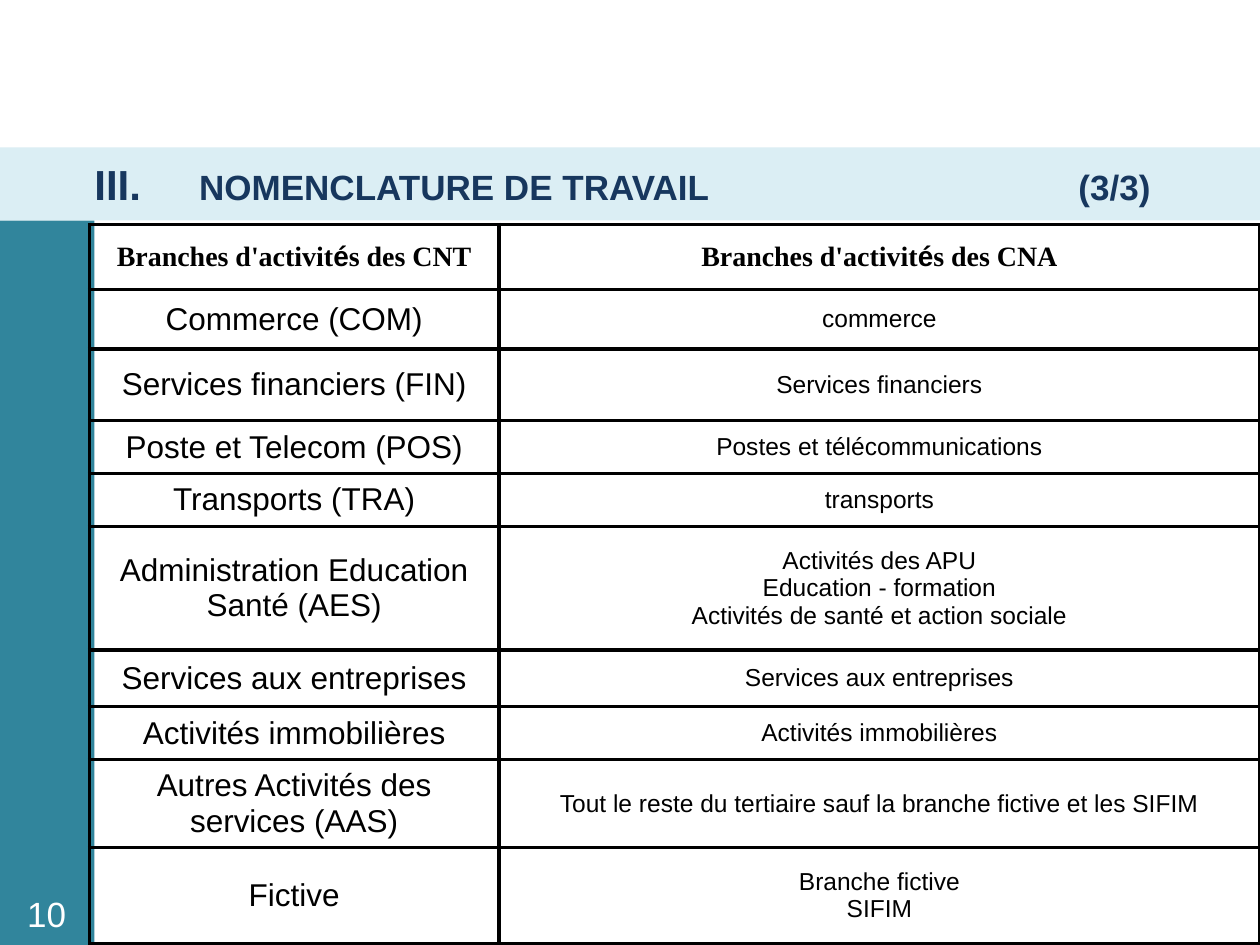
from lxml.etree import SubElement
from pptx import Presentation
from pptx.dml.color import RGBColor
from pptx.enum.shapes import MSO_SHAPE as Shape
from pptx.enum.text import MSO_ANCHOR as Anchor, PP_ALIGN as Align
from pptx.oxml.ns import qn
from pptx.util import Inches, Pt

BRANCHES = [
    (0.47, "Commerce (COM)", ["commerce"]),
    (0.57, "Services financiers (FIN)", ["Services financiers"]),
    (0.42, "Poste et Telecom (POS)", ["Postes et télécommunications"]),
    (0.42, "Transports (TRA)", ["transports"]),
    (0.98, "Administration Education Santé (AES)",
     ["Activités des APU", "Education - formation", "Activités de santé et action sociale"]),
    (0.45, "Services aux entreprises", ["Services aux entreprises"]),
    (0.42, "Activités immobilières", ["Activités immobilières"]),
    (0.66, "Autres Activités des services (AAS)",
     ["Tout le reste du tertiaire sauf la branche fictive et les SIFIM"]),
    (0.76, "Fictive", ["Branche fictive", "SIFIM"]),
]
HEADER_HEIGHT = 0.52
COLUMN_WIDTHS = (3.25, 6.04)


def rgb(value):
    return RGBColor.from_string(value)


def style(font, size, color, name="Arial", bold=False):
    font.size, font.name, font.bold = Pt(size), name, bold
    font.color.rgb = rgb(color)


def add_band(slide, box, color):
    band = slide.shapes.add_shape(Shape.RECTANGLE, *map(Inches, box))
    band.shadow.inherit = False
    band.fill.solid()
    band.fill.fore_color.rgb = rgb(color)
    band.line.fill.background()
    return band


def add_heading(slide, box):
    frame = add_band(slide, box, "DBEEF4").text_frame
    frame.margin_left = Inches(0.75)
    frame.margin_right = 0
    frame.vertical_anchor = Anchor.MIDDLE
    line = frame.paragraphs[0]
    line.alignment = Align.LEFT
    stops = SubElement(line._p.get_or_add_pPr(), qn("a:tabLst"))
    for position in (0.83, 7.81):
        SubElement(stops, qn("a:tab"), pos=str(Inches(position)), algn="l")
    for text, size in (("III.\t", 24), ("NOMENCLATURE DE TRAVAIL\t(3/3)", 20)):
        run = line.add_run()
        run.text = text
        style(run.font, size, "17375E", bold=True)


def add_page_number(slide, box):
    frame = slide.shapes.add_textbox(*map(Inches, box)).text_frame
    frame.word_wrap = True
    frame.vertical_anchor = Anchor.MIDDLE
    number = frame.paragraphs[0]
    number.text = "10"
    number.alignment = Align.CENTER
    style(number.font, 20, "FFFFFF")


def format_cell(cell):
    cell.vertical_anchor = Anchor.MIDDLE
    properties = cell._tc.get_or_add_tcPr()
    for side in ("lnL", "lnR", "lnT", "lnB"):
        border = SubElement(properties, qn(f"a:{side}"), w=str(Pt(2.25)))
        SubElement(SubElement(border, qn("a:solidFill")), qn("a:srgbClr"), val="000000")
    cell.fill.background()


def fill_header(cell, account):
    format_cell(cell)
    label = cell.text_frame.paragraphs[0]
    label.alignment = Align.CENTER
    for text, name in (("Branches d'activit", "Times New Roman"), ("é", "Arial"),
                       (f"s des {account}", "Times New Roman")):
        run = label.add_run()
        run.text = text
        style(run.font, 16, "000000", name, True)


def fill_cell(cell, lines, size):
    format_cell(cell)
    cell.text_frame.text = "\n".join(lines)
    for line in cell.text_frame.paragraphs:
        line.alignment = Align.CENTER
        style(line.font, size, "000000")


def add_branch_table(slide, left, top):
    heights = [HEADER_HEIGHT] + [height for height, _, _ in BRANCHES]
    box = (left, top, sum(COLUMN_WIDTHS), sum(heights))
    table = slide.shapes.add_table(len(heights), 2, *map(Inches, box)).table
    table.horz_banding = table.first_row = False
    for column, width in zip(table.columns, COLUMN_WIDTHS):
        column.width = Inches(width)
    for row, height in zip(table.rows, heights):
        row.height = Inches(height)
    for column, account in enumerate(("CNT", "CNA")):
        fill_header(table.cell(0, column), account)
    for row, (_, quarterly, annual) in enumerate(BRANCHES, 1):
        fill_cell(table.cell(row, 0), [quarterly], 18)
        fill_cell(table.cell(row, 1), annual, 14)


def main():
    deck = Presentation()
    deck.slide_width, deck.slide_height = Inches(10), Inches(7.5)
    slide = deck.slides.add_slide(deck.slide_layouts[6])
    add_heading(slide, (0, 1.17, 10, 0.58))
    add_band(slide, (0, 1.75, 0.75, 5.75), "31859C")
    add_page_number(slide, (0.03, 7.05, 0.68, 0.4))
    add_branch_table(slide, 0.71, 1.78)
    deck.save("out.pptx")


if __name__ == "__main__":
    main()
